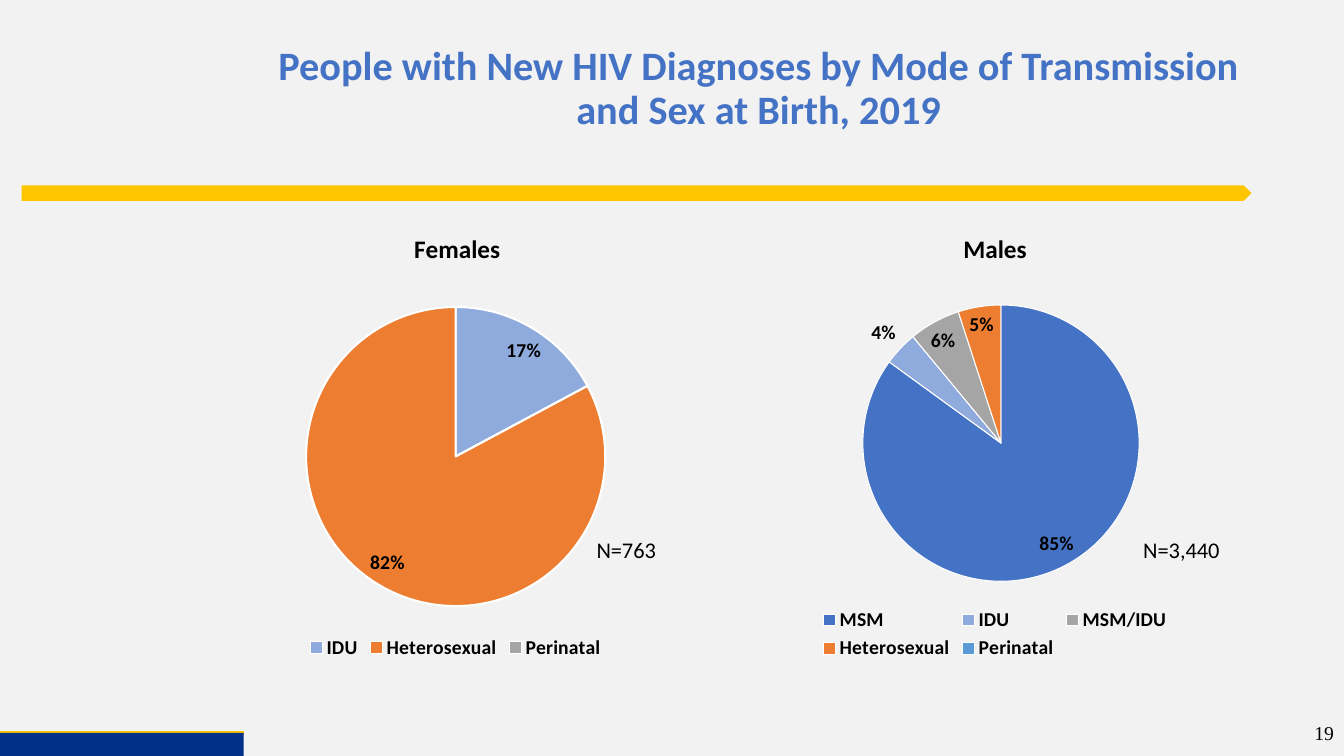
from dataclasses import dataclass

import lxml.etree
import pptx
import pptx.chart.data
import pptx.dml.color
import pptx.enum.chart
import pptx.enum.shapes
import pptx.enum.text
import pptx.oxml
import pptx.oxml.ns
import pptx.util

Pt = pptx.util.Pt
qn = pptx.oxml.ns.qn
ALIGN = pptx.enum.text.PP_ALIGN
ANCHOR = pptx.enum.text.MSO_ANCHOR
SHAPE = pptx.enum.shapes.MSO_SHAPE

HUES = {
    "back": "F2F2F2", "gold": "FFC600", "navy": "003087", "black": "000000",
    "white": "FFFFFF", "blue": "4472C4", "pale": "8FAADC", "gray": "A5A5A5",
    "orange": "ED7D31", "sky": "5B9BD5",
}
SLICES = {"MSM": "blue", "IDU": "pale", "MSM/IDU": "gray",
          "Heterosexual": "orange", "Perinatal": "sky"}
Box = tuple[float, float, float, float]


@dataclass
class Band:
    kind: int
    box: Box
    hue: str


@dataclass
class Label:
    text: str
    box: Box
    size: float
    font: str = "Calibri"
    align: int = ALIGN.LEFT
    anchor: int = ANCHOR.TOP


@dataclass
class Pie:
    title: str
    box: Box
    shares: dict[str, int]
    hues: dict[str, str]
    edge: float
    head: dict[str, float]
    disc: dict[str, float]


BANDS = [
    Band(SHAPE.PENTAGON, (15.5, 132.5, 878.5, 11), "gold"),
    Band(SHAPE.RECTANGLE, (0, 523.5, 174, 16.5), "navy"),
]
LABELS = [
    Label("19", (744, 509, 216, 29), 14, "Times New Roman", ALIGN.RIGHT, ANCHOR.MIDDLE),
    Label("N=763", (419, 379.5, 79, 26.5), 16),
    Label("N=3,440", (809.5, 379.5, 74, 26.5), 16),
]
PIES = [
    Pie("Females", (120, 145.5, 411, 328.5),
        {"IDU": 17, "Heterosexual": 82, "Perinatal": 0},
        SLICES | {"Perinatal": "gray"}, 1.5,
        {"x": 0.42, "y": 0.05}, {"x": 0.24, "y": 0.22, "w": 0.52, "h": 0.66}),
    Pie("Males", (495.5, 145.5, 430.5, 329),
        {"MSM": 85, "IDU": 4, "MSM/IDU": 6, "Heterosexual": 5, "Perinatal": 0},
        SLICES, 0.75,
        {"x": 0.44, "y": 0.05}, {"x": 0.28, "y": 0.22, "w": 0.46, "h": 0.6}),
]


def tint(hue: str) -> pptx.dml.color.RGBColor:
    return pptx.dml.color.RGBColor.from_string(HUES[hue])


def style(font, size: float, hue: str = "black", bold: bool = False,
          name: str = "Calibri") -> None:
    font.name, font.size, font.bold = name, Pt(size), bold
    font.color.rgb = tint(hue)


def points(box: Box) -> list[int]:
    return [Pt(side) for side in box]


def place(node, index: int, spots: dict[str, float]) -> None:
    """Give a chart element a fixed place, in shares of the chart."""
    for old in node.findall(qn("c:layout")):
        node.remove(old)
    layout = lxml.etree.Element(qn("c:layout"))
    manual = lxml.etree.SubElement(layout, qn("c:manualLayout"))
    if "w" in spots:
        lxml.etree.SubElement(manual, qn("c:layoutTarget")).set("val", "inner")
    for axis in ("x", "y"):
        lxml.etree.SubElement(manual, qn(f"c:{axis}Mode")).set("val", "edge")
    for key, value in spots.items():
        lxml.etree.SubElement(manual, qn(f"c:{key}")).set("val", str(value))
    node.insert(index, layout)


def add_band(slide, band: Band) -> None:
    shape = slide.shapes.add_shape(band.kind, *points(band.box))
    shape.shadow.inherit = False
    shape.fill.solid()
    shape.fill.fore_color.rgb = tint(band.hue)
    shape.line.fill.background()


def add_rule(slide) -> None:
    rule = slide.shapes.add_connector(
        pptx.enum.shapes.MSO_CONNECTOR.STRAIGHT, *points((0, 523.5, 174, 523.5)))
    rule.line.color.rgb = tint("gold")
    rule.line.width = Pt(3)
    lxml.etree.SubElement(rule.element.spPr, qn("a:effectLst"))


def add_label(slide, label: Label) -> None:
    frame = slide.shapes.add_textbox(*points(label.box)).text_frame
    frame.word_wrap = True
    frame.vertical_anchor = label.anchor
    frame.text = label.text
    line = frame.paragraphs[0]
    line.alignment = label.align
    style(line.runs[0].font, label.size, name=label.font)


def set_title(slide, text: str) -> None:
    title = slide.shapes.title
    title.left, title.top, title.width, title.height = points((189.5, 29, 705, 104.5))
    frame = title.text_frame
    frame.text = text
    frame.word_wrap = True
    frame.auto_size = pptx.enum.text.MSO_AUTO_SIZE.NONE
    frame.vertical_anchor = ANCHOR.TOP
    line = frame.paragraphs[0]
    line.alignment = ALIGN.CENTER
    line.line_spacing = 0.9
    style(line.runs[0].font, 28.8, "blue", True)


def add_pie(slide, pie: Pie) -> None:
    data = pptx.chart.data.CategoryChartData()
    data.categories = list(pie.shares)
    data.add_series("Series 1", list(pie.shares.values()))
    chart = slide.shapes.add_chart(
        pptx.enum.chart.XL_CHART_TYPE.PIE, *points(pie.box), data).chart
    style(chart.font, 10)

    # Clear chart ground
    ground = lxml.etree.Element(qn("c:spPr"))
    lxml.etree.SubElement(ground, qn("a:noFill"))
    edge = lxml.etree.SubElement(ground, qn("a:ln"))
    lxml.etree.SubElement(edge, qn("a:noFill"))
    root = chart.element.find(qn("c:chart"))
    root.addnext(ground)

    # Heading and legend
    chart.has_title = True
    frame = chart.chart_title.text_frame
    frame.text = pie.title
    style(frame.paragraphs[0].runs[0].font, 18, bold=True)
    place(root.find(qn("c:title")), 1, pie.head)
    place(root.find(qn("c:plotArea")), 0, pie.disc)
    chart.has_legend = True
    chart.legend.position = pptx.enum.chart.XL_LEGEND_POSITION.BOTTOM
    chart.legend.include_in_layout = False
    style(chart.legend.font, 14, bold=True)

    # Slices and their labels
    plot = chart.plots[0]
    plot.vary_by_categories = True
    for index, name in enumerate(pie.shares):
        wedge = plot.series[0].points[index].format
        wedge.fill.solid()
        wedge.fill.fore_color.rgb = tint(pie.hues[name])
        wedge.line.color.rgb = tint("white")
        wedge.line.width = Pt(pie.edge)
    labels = plot.series[0].data_labels
    style(labels.font, 14, bold=True)
    labels.show_value = True
    labels.number_format = '0"%"'
    labels.number_format_is_linked = False
    labels.position = pptx.enum.chart.XL_LABEL_POSITION.BEST_FIT


def main() -> None:
    deck = pptx.Presentation()
    deck.slide_width, deck.slide_height = Pt(960), Pt(540)
    slide = deck.slides.add_slide(deck.slide_layouts[5])
    slide.background.fill.solid()
    slide.background.fill.fore_color.rgb = tint("back")

    # Title, rule and bands
    set_title(slide, "People with New HIV Diagnoses by Mode of Transmission "
                     "and Sex at Birth, 2019")
    add_rule(slide)
    for band in BANDS:
        add_band(slide, band)

    # Counts, page number and charts
    for label in LABELS:
        add_label(slide, label)
    for pie in PIES:
        add_pie(slide, pie)
    deck.save("out.pptx")


if __name__ == "__main__":
    main()
